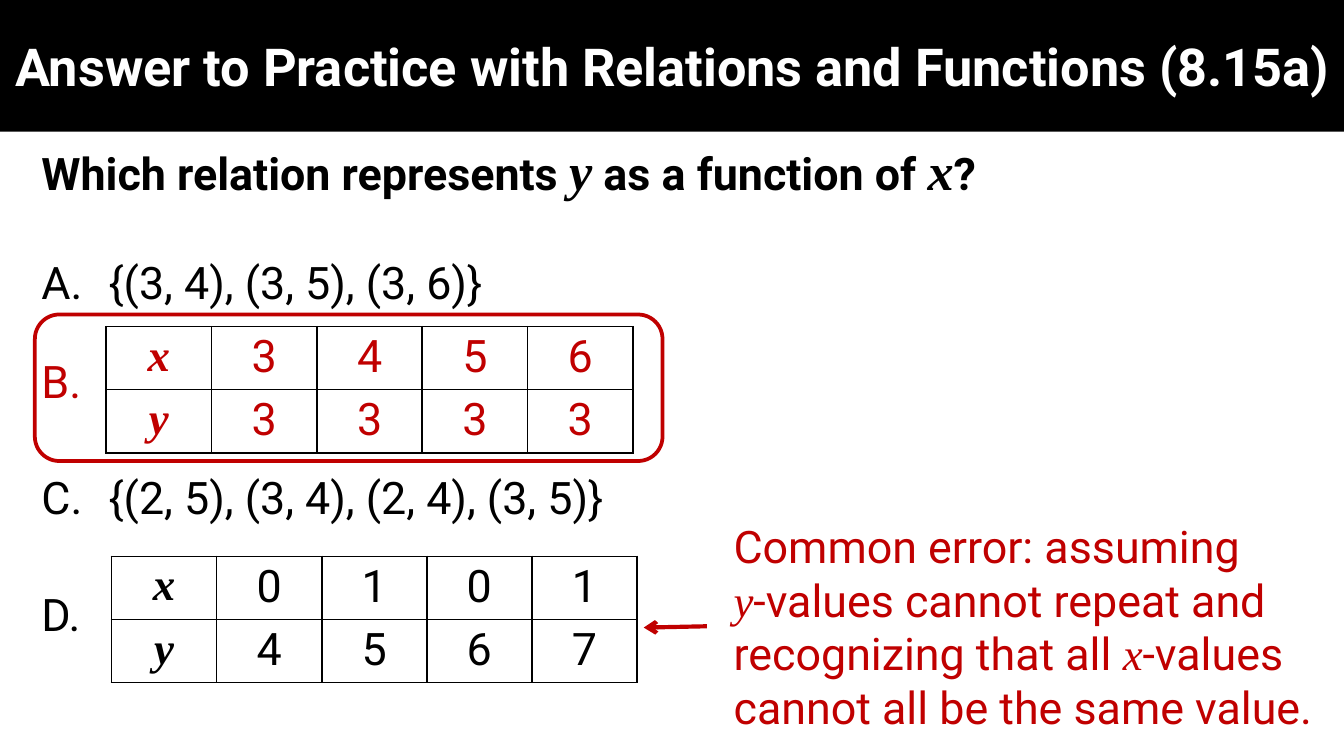
from lxml.etree import SubElement
from pptx import Presentation
from pptx.dml.color import RGBColor
from pptx.enum.shapes import MSO_CONNECTOR, MSO_SHAPE
from pptx.enum.text import MSO_ANCHOR, PP_ALIGN
from pptx.oxml.ns import qn
from pptx.util import Inches, Pt

BLACK, WHITE, RED = "000000", "FFFFFF", "C00000"
SANS, SERIF = "Roboto", "Times New Roman"


def color(hex_value):
    return RGBColor.from_string(hex_value)


def inches(*lengths):
    return [Inches(length) for length in lengths]


def format_run(run, size, hex_value, bold=False, variable=False):
    font = run.font
    font.name = SERIF if variable else SANS
    font.size = Pt(size)
    font.bold = bold
    font.italic = variable
    font.color.rgb = color(hex_value)


def write_runs(paragraph, texts, size, hex_value, bold=False, variable_size=None):
    for text in texts:
        variable = text in ("x", "y")
        run = paragraph.add_run()
        run.text = text
        run_size = variable_size if variable and variable_size else size
        format_run(run, run_size, hex_value, bold, variable)


def add_text_frame(slide, box):
    text_frame = slide.shapes.add_textbox(*inches(*box)).text_frame
    text_frame.word_wrap = True
    return text_frame


def add_title(slide, box, title):
    shape = slide.shapes.add_shape(MSO_SHAPE.RECTANGLE, *inches(*box))
    shape.shadow.inherit = False
    shape.fill.solid()
    shape.fill.fore_color.rgb = color(BLACK)
    shape.line.fill.background()
    text_frame = shape.text_frame
    text_frame.vertical_anchor = MSO_ANCHOR.MIDDLE
    text_frame.margin_left = text_frame.margin_right = 0
    paragraph = text_frame.paragraphs[0]
    paragraph.alignment = PP_ALIGN.CENTER
    write_runs(paragraph, [title], 28, WHITE, bold=True)


def add_letter(paragraph, hex_value):
    properties = paragraph._p.get_or_add_pPr()
    properties.set("marL", str(Inches(0.63)))
    properties.set("indent", str(Inches(-0.5)))
    bullet_color = SubElement(properties, qn("a:buClr"))
    SubElement(bullet_color, qn("a:srgbClr"), val=hex_value)
    SubElement(properties, qn("a:buFont"), typeface=SANS)
    SubElement(properties, qn("a:buAutoNum"), type="alphaUcPeriod")


def add_question(slide, box, question, choices):
    text_frame = add_text_frame(slide, box)
    paragraph = text_frame.paragraphs[0]
    paragraph._p.get_or_add_pPr().set("marL", str(Inches(0.13)))
    write_runs(paragraph, question, 24, BLACK, bold=True, variable_size=28)
    for text, gap, hex_value in choices:
        paragraph = text_frame.add_paragraph()
        paragraph.space_before = Pt(gap)
        add_letter(paragraph, hex_value)
        write_runs(paragraph, [text], 24, hex_value)


def set_borders(cell):
    properties = cell._tc.get_or_add_tcPr()
    for index, side in enumerate(("lnL", "lnR", "lnT", "lnB")):
        line = properties.makeelement(qn(f"a:{side}"), {"w": str(Pt(1))})
        fill = SubElement(line, qn("a:solidFill"))
        SubElement(fill, qn("a:srgbClr"), val=BLACK)
        properties.insert(index, line)


def add_value_table(slide, box, rows, hex_value):
    frame = slide.shapes.add_table(len(rows), len(rows[0]), *inches(*box))
    table = frame.table
    table.first_row = table.horz_banding = False
    for row_index, row in enumerate(rows):
        for column_index, text in enumerate(row):
            cell = table.cell(row_index, column_index)
            cell.fill.background()
            cell.margin_top = cell.margin_bottom = Pt(2.5)
            set_borders(cell)
            paragraph = cell.text_frame.paragraphs[0]
            paragraph.alignment = PP_ALIGN.CENTER
            write_runs(paragraph, [text], 24, hex_value, bold=column_index == 0)


def add_answer_outline(slide, box):
    shape = slide.shapes.add_shape(MSO_SHAPE.ROUNDED_RECTANGLE, *inches(*box))
    shape.shadow.inherit = False
    shape.fill.background()
    shape.line.color.rgb = color(RED)
    shape.line.width = Pt(2)


def add_error_note(slide, box, lines):
    text_frame = add_text_frame(slide, box)
    for index, texts in enumerate(lines):
        paragraph = text_frame.add_paragraph() if index else text_frame.paragraphs[0]
        write_runs(paragraph, texts, 24, RED)


def add_arrow(slide, start, end):
    connector = slide.shapes.add_connector(
        MSO_CONNECTOR.STRAIGHT, *inches(*start, *end))
    connector.line.color.rgb = color(RED)
    connector.line.width = Pt(2.25)
    SubElement(connector.line._get_or_add_ln(), qn("a:tailEnd"), type="arrow")
    SubElement(connector._element.spPr, qn("a:effectLst"))


def main():
    presentation = Presentation()
    presentation.slide_width = Inches(10)
    presentation.slide_height = presentation.slide_width * 9 // 16
    slide = presentation.slides.add_slide(presentation.slide_layouts[6])

    add_title(slide, (0, 0, 10, 0.98),
              "Answer to Practice with Relations and Functions (8.15a)")
    add_question(
        slide, (0.08, 0.98, 9.76, 4.5),
        ["Which relation represents ", "y", " as a function of ", "x", "?"],
        [("{(3, 4), (3, 5), (3, 6)}", 29, BLACK),
         (" ", 24, RED),
         ("{(2, 5), (3, 4), (2, 4), (3, 5)}", 33.5, BLACK),
         (" ", 33.5, BLACK)])
    add_value_table(slide, (0.79, 2.43, 3.92, 0.94), ["x3456", "y3333"], RED)
    add_value_table(slide, (0.83, 4.14, 3.91, 0.94), ["x0101", "y4567"], BLACK)
    add_answer_outline(slide, (0.26, 2.34, 4.67, 1.09))
    add_error_note(
        slide, (5.36, 3.81, 4.58, 1.72),
        [["Common error: assuming"],
         ["y", "-values cannot repeat and recognizing that all ", "x",
          "-values cannot all be the same value."]])
    add_arrow(slide, (5.26, 4.66), (4.79, 4.67))
    presentation.save("out.pptx")


if __name__ == "__main__":
    main()
